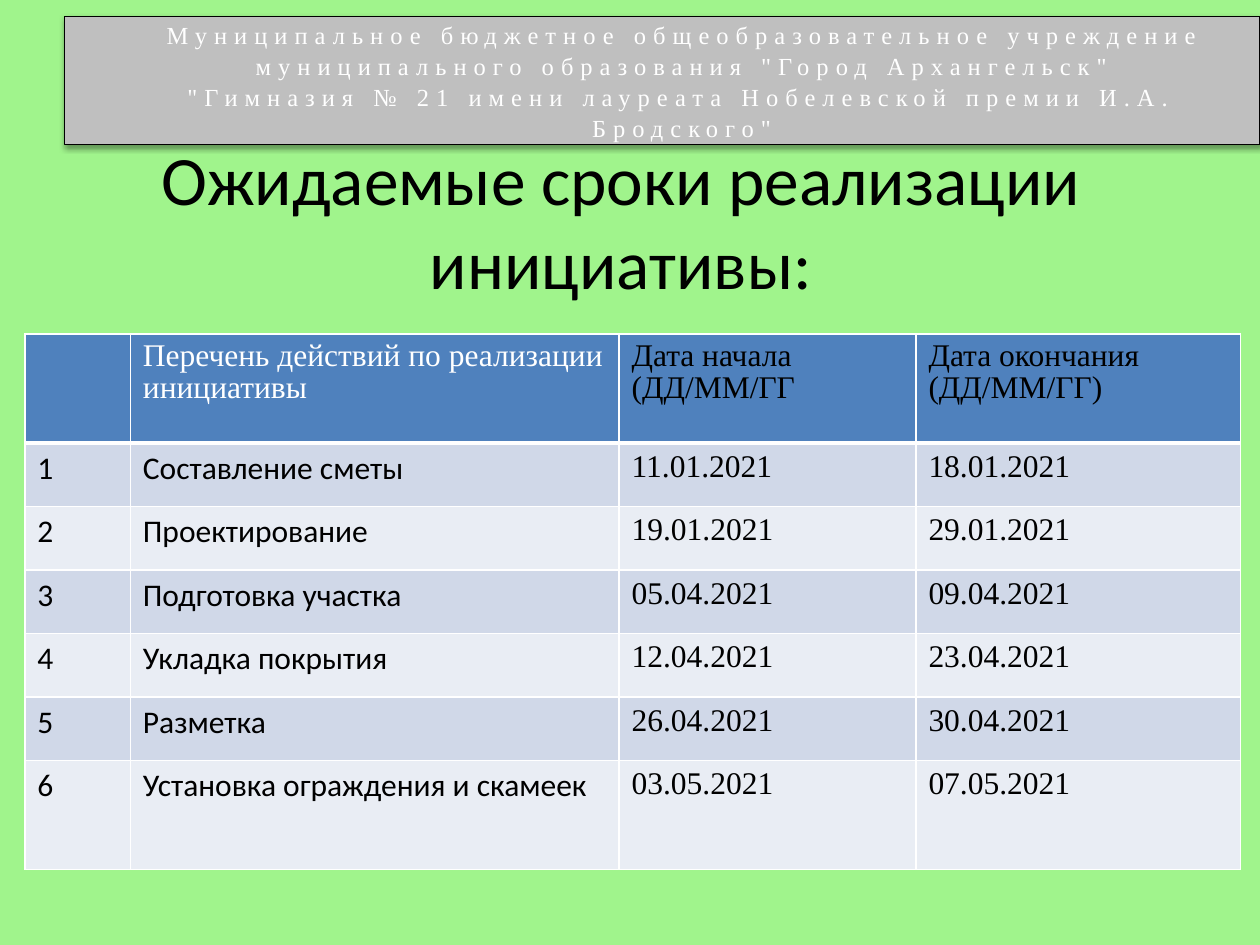
from dataclasses import dataclass

from lxml.etree import SubElement
from pptx import Presentation
from pptx.dml.color import RGBColor
from pptx.enum.shapes import MSO_SHAPE as Shape
from pptx.enum.text import MSO_ANCHOR as Anchor, MSO_AUTO_SIZE as AutoSize, PP_ALIGN as Align
from pptx.oxml import parse_xml
from pptx.oxml.ns import nsdecls, qn
from pptx.util import Cm, Pt


@dataclass(frozen=True)
class Theme:
    """Colours, fonts and type sizes of the slide."""
    background: str = "A0F48C"
    banner: str = "BFBFBF"
    header: str = "4F81BD"
    bands: tuple = ("D0D8E8", "E9EDF4")
    light: str = "FFFFFF"
    dark: str = "000000"
    serif: str = "Times New Roman"
    sans: str = "Calibri"
    banner_size: float = 14
    title_size: float = 39.6
    table_size: float = 18
    tracking: float = 4


@dataclass(frozen=True)
class Box:
    """A region of the slide in centimetres."""
    left: float
    top: float
    width: float
    height: float

    def lengths(self):
        """Return left, top, width and height as slide lengths."""
        return [Cm(side) for side in (self.left, self.top, self.width, self.height)]

    def inset(self, left, top, right, bottom):
        """Return the box moved inwards on each side."""
        return Box(self.left + left, self.top + top,
                   self.width - left - right, self.height - top - bottom)


THEME = Theme()
SCHOOL = (
    "Муниципальное бюджетное общеобразовательное учреждение",
    'муниципального образования "Город Архангельск"',
    '"Гимназия № 21 имени лауреата Нобелевской премии И.А. Бродского"',
)
TITLE = "Ожидаемые сроки реализации инициативы:"
HEADINGS = ("", "Перечень действий по реализации инициативы",
            "Дата начала (ДД/ММ/ГГ", "Дата окончания (ДД/ММ/ГГ)")
STAGES = (
    ("Составление сметы", "11.01.2021", "18.01.2021"),
    ("Проектирование", "19.01.2021", "29.01.2021"),
    ("Подготовка участка", "05.04.2021", "09.04.2021"),
    ("Укладка покрытия", "12.04.2021", "23.04.2021"),
    ("Разметка", "26.04.2021", "30.04.2021"),
    ("Установка ограждения и скамеек", "03.05.2021", "07.05.2021"),
)
COLUMN_WIDTHS = (2.13, 9.86, 5.99, 6.55)
ROW_HEIGHTS = (2.2, *[1.28] * 5, 2.2)


def rgb(colour):
    """Turn a hex string into a colour."""
    return RGBColor.from_string(colour)


def paint(target, colour):
    """Give a shape, cell or background a solid fill."""
    target.fill.solid()
    target.fill.fore_color.rgb = rgb(colour)


def set_font(paragraph, name, size, colour):
    """Set the typeface, size and colour of a paragraph."""
    font = paragraph.font
    font.name, font.size, font.bold = name, Pt(size), False
    font.color.rgb = rgb(colour)


def add_shadow(shape):
    """Put a soft shadow below a shape."""
    shape.shadow.inherit = False
    effects = shape._element.spPr.find(qn("a:effectLst"))
    effects.append(parse_xml(
        f'<a:outerShdw {nsdecls("a")} blurRad="{Pt(3.1)}" dist="{Pt(1.6)}" dir="5400000" '
        f'rotWithShape="0"><a:srgbClr val="{THEME.dark}"><a:alpha val="38000"/>'
        '</a:srgbClr></a:outerShdw>'))


def add_banner(slide, box):
    """Place the grey panel with the letter-spaced school name."""
    panel = slide.shapes.add_shape(Shape.RECTANGLE, *box.lengths())
    paint(panel, THEME.banner)
    panel.line.color.rgb = rgb(THEME.dark)
    panel.line.width = Pt(0.75)
    add_shadow(panel)

    name_box = box.inset(1.19, -0.08, 0.41, 0.03)
    school_name = slide.shapes.add_textbox(*name_box.lengths()).text_frame
    school_name.word_wrap = True
    school_name.text = "\n".join(SCHOOL)
    for line in school_name.paragraphs:
        line.alignment = Align.CENTER
        line.line_spacing = 1.05
        set_font(line, THEME.serif, THEME.banner_size, THEME.light)
        for run in line.runs:
            run.font._element.set("spc", str(THEME.tracking * 100))


def add_title(slide, box):
    """Move and format the title placeholder."""
    title = slide.shapes.title
    title.left, title.top, title.width, title.height = box.lengths()
    frame = title.text_frame
    frame.text = TITLE
    frame.word_wrap = True
    frame.auto_size = AutoSize.NONE
    frame.vertical_anchor = Anchor.MIDDLE
    frame.paragraphs[0].alignment = Align.CENTER
    set_font(frame.paragraphs[0], THEME.sans, THEME.title_size, THEME.dark)


def add_borders(cell, top, bottom):
    """Draw white lines around a cell, with given top and bottom widths."""
    properties = cell._tc.get_or_add_tcPr()
    for side, width in (("L", 1), ("R", 1), ("T", top), ("B", bottom)):
        line = SubElement(properties, qn(f"a:ln{side}"), w=str(Pt(width)))
        SubElement(SubElement(line, qn("a:solidFill")), qn("a:srgbClr"), val=THEME.light)


def fill_cell(cell, text, row, column):
    """Write and style a cell according to its place in the schedule."""
    is_header = row == 0
    add_borders(cell, 3 if row == 1 else 1, 3 if is_header else 1)
    paint(cell, THEME.header if is_header else THEME.bands[(row - 1) % 2])
    cell.text = text
    paragraph = cell.text_frame.paragraphs[0]
    if is_header:
        paragraph.line_spacing = 0.93
    face = THEME.serif if is_header or column > 1 else THEME.sans
    colour = THEME.light if is_header and column < 2 else THEME.dark
    set_font(paragraph, face, THEME.table_size, colour)


def add_schedule(slide, box):
    """Place the table of stages with start and end dates."""
    rows = [HEADINGS, *((str(number), *stage) for number, stage in enumerate(STAGES, 1))]
    schedule = slide.shapes.add_table(len(rows), len(HEADINGS), *box.lengths()).table
    schedule.first_row = schedule.horz_banding = False
    for column, width in zip(schedule.columns, COLUMN_WIDTHS):
        column.width = Cm(box.width * width / sum(COLUMN_WIDTHS))
    for row, height in zip(schedule.rows, ROW_HEIGHTS):
        row.height = Cm(box.height * height / sum(ROW_HEIGHTS))
    for row, texts in enumerate(rows):
        for column, text in enumerate(texts):
            fill_cell(schedule.cell(row, column), text, row, column)


def main():
    """Build and save the slide."""
    deck = Presentation()
    deck.slide_width, deck.slide_height = Cm(25.4), Cm(19.05)
    slide = deck.slides.add_slide(deck.slide_layouts[5])
    paint(slide.background, THEME.background)
    add_banner(slide, Box(1.3, 0.33, 24.1, 2.59))
    add_title(slide, Box(1.09, 2.84, 22.86, 3.18))
    add_schedule(slide, Box(0.5, 6.73, 24.51, 10.8))
    deck.save("out.pptx")


if __name__ == "__main__":
    main()
